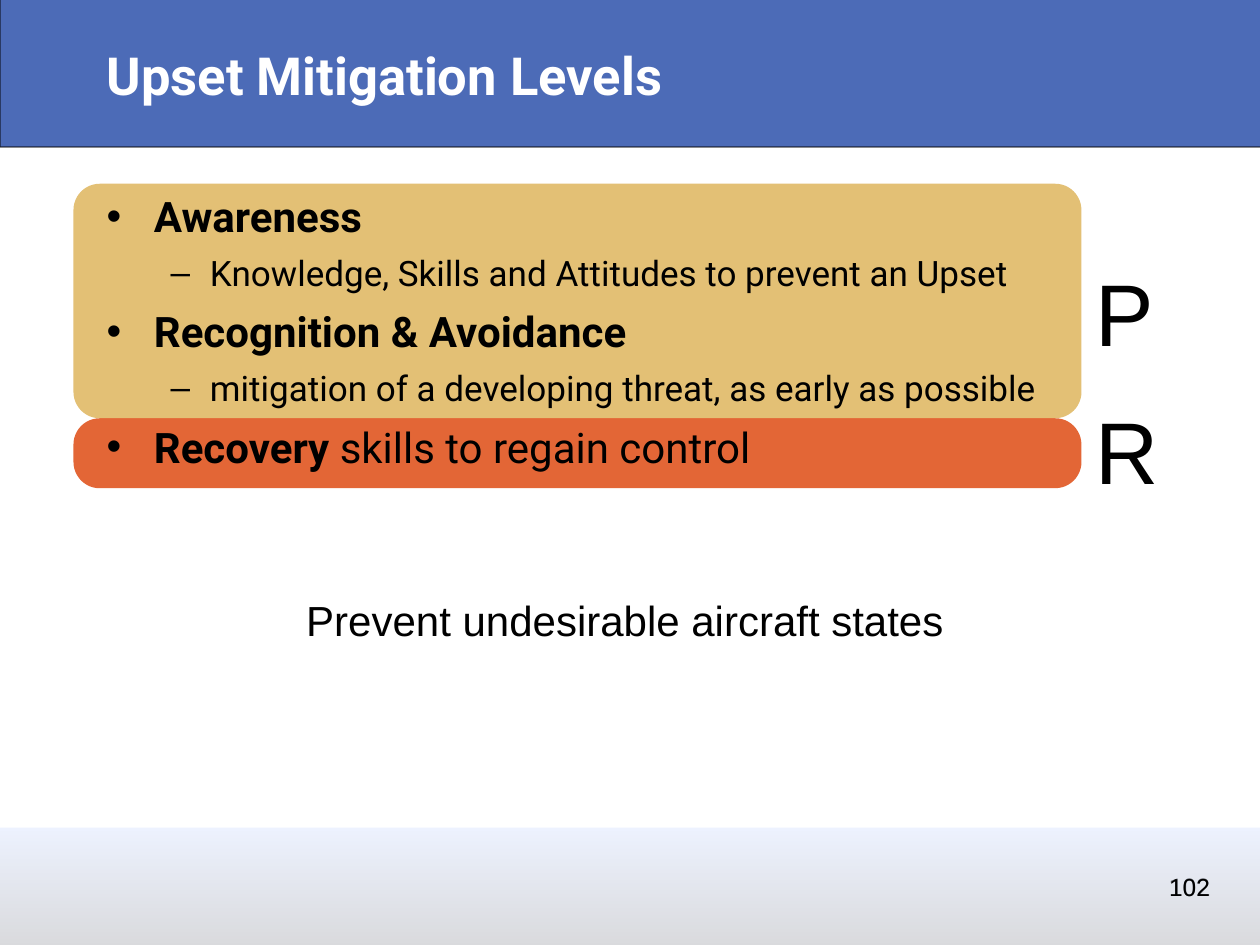
from dataclasses import dataclass

from lxml.etree import SubElement
from pptx import Presentation
from pptx.dml.color import RGBColor as Rgb
from pptx.enum.shapes import MSO_SHAPE as Kind
from pptx.enum.text import MSO_ANCHOR as Anchor, MSO_AUTO_SIZE as Fit, PP_ALIGN as Align
from pptx.oxml.ns import qn
from pptx.shapes.autoshape import Shape
from pptx.slide import Slide
from pptx.util import Pt


@dataclass(frozen=True)
class Theme:
    head: str = "Roboto"
    plain: str = "Arial"
    ink: Rgb = Rgb(0, 0, 0)
    white: Rgb = Rgb(255, 255, 255)
    band: Rgb = Rgb(0x00, 0x2D, 0x99)
    sand: Rgb = Rgb(0xE3, 0xC0, 0x75)
    rust: Rgb = Rgb(0xE3, 0x66, 0x36)
    sky: Rgb = Rgb(0xDC, 0xE6, 0xFF)
    grey: Rgb = Rgb(0xB4, 0xB5, 0xBA)
    title: int = 30
    topic: int = 24
    detail: int = 20
    letter: int = 50
    page: int = 14


@dataclass(frozen=True)
class Box:
    left: float
    top: float
    width: float
    height: float

    def lengths(self) -> tuple[Pt, ...]:
        return Pt(self.left), Pt(self.top), Pt(self.width), Pt(self.height)


@dataclass(frozen=True)
class Level:
    mark: str
    size: int
    margin: float
    hang: float
    before: float


@dataclass(frozen=True)
class Item:
    level: int
    bold: str = ""
    text: str = ""


@dataclass(frozen=True)
class Label:
    text: str
    box: Box
    size: int


THEME = Theme()
LEVELS = (Level("•", THEME.topic, 30, 27, 7), Level("–", THEME.detail, 62, 22.5, 6))
ITEMS = (
    Item(0, "Awareness"),
    Item(1, text="Knowledge, Skills and Attitudes to prevent an Upset"),
    Item(0, "Recognition & Avoidance"),
    Item(1, text="mitigation of a developing threat, as early as possible"),
    Item(0, "Recovery", " skills to regain control"),
)
LABELS = (
    Label("P", Box(623, 148, 45, 64), THEME.letter),
    Label("R", Box(623, 227, 48, 64), THEME.letter),
    Label("Prevent undesirable aircraft states", Box(172, 340, 377, 35), THEME.topic),
)
PAGE = Box(667.5, 495, 24.5, 24)
PANELS = ((Box(42, 239, 576, 40), THEME.rust), (Box(42, 105, 576, 134), THEME.sand))
RADIUS = 15


def set_font(para, face: str, size: int, color: Rgb = THEME.ink) -> None:
    font = para.font
    font.name, font.size, font.color.rgb = face, Pt(size), color


def indent(para, margin: float, hang: float = 0) -> None:
    props = para._p.get_or_add_pPr()
    props.set("marL", str(Pt(margin)))
    props.set("indent", str(-Pt(hang)))


def inset(frame, left: float, top: float, right: float, bottom: float) -> None:
    frame.margin_left, frame.margin_top = Pt(left), Pt(top)
    frame.margin_right, frame.margin_bottom = Pt(right), Pt(bottom)


def fade(shape: Shape, percent: int) -> None:
    """Make every colour of the shape partly opaque."""
    for color in list(shape.element.spPr.iter(qn("a:srgbClr"))):
        SubElement(color, qn("a:alpha")).set("val", str(percent * 1000))


def add_block(slide: Slide, kind: Kind, box: Box) -> Shape:
    shape = slide.shapes.add_shape(kind, *box.lengths())
    shape.shadow.inherit = False
    shape.line.fill.background()
    return shape


def add_panel(slide: Slide, box: Box, color: Rgb) -> None:
    panel = add_block(slide, Kind.ROUNDED_RECTANGLE, box)
    panel.adjustments[0] = RADIUS / box.height
    panel.fill.solid()
    panel.fill.fore_color.rgb = color


def add_footer(slide: Slide) -> None:
    foot = add_block(slide, Kind.RECTANGLE, Box(-7, 473, 731, 70))
    foot.fill.gradient()
    foot.fill.gradient_angle = 270
    for stop, color, place in zip(foot.fill.gradient_stops, (THEME.sky, THEME.grey), (0, 1)):
        stop.color.rgb, stop.position = color, place
    fade(foot, 50)


def add_header(slide: Slide) -> None:
    band = add_block(slide, Kind.RECTANGLE, Box(0, -3, 721, 87))
    band.fill.solid()
    band.fill.fore_color.rgb = THEME.band
    band.line.color.rgb = THEME.ink
    band.line.width = Pt(0.75)
    fade(band, 70)


def add_page(slide: Slide, face: str) -> None:
    frame = slide.shapes.add_textbox(*PAGE.lengths()).text_frame
    frame.word_wrap = False
    inset(frame, 0, 3.6, 0, 3.6)
    para = frame.paragraphs[0]
    para.text, para.alignment = "102", Align.CENTER
    set_font(para, face, THEME.page)


def add_label(slide: Slide, label: Label) -> None:
    frame = slide.shapes.add_textbox(*label.box.lengths()).text_frame
    frame.word_wrap, frame.auto_size = False, Fit.SHAPE_TO_FIT_TEXT
    inset(frame, 0, 0, 3, 0)
    para = frame.paragraphs[0]
    para.text = label.text
    indent(para, 3)
    set_font(para, THEME.plain, label.size)


def place(holder, box: Box, anchor: Anchor):
    """Move a placeholder, bring it to the front and return its text frame."""
    holder.left, holder.top, holder.width, holder.height = box.lengths()
    holder.element.getparent().append(holder.element)
    frame = holder.text_frame
    frame.word_wrap, frame.auto_size = True, Fit.NONE
    frame.vertical_anchor = anchor
    inset(frame, 4, 4, 10, 4)
    return frame


def fill_title(slide: Slide) -> None:
    frame = place(slide.shapes.title, Box(54, 12, 612, 61), Anchor.MIDDLE)
    para = frame.paragraphs[0]
    para.text, para.alignment = "Upset Mitigation Levels", Align.LEFT
    indent(para, 3)
    set_font(para, THEME.head, THEME.title, THEME.white)
    para.font.bold = True


def fill_body(slide: Slide) -> None:
    frame = place(slide.placeholders[1], Box(54, 105, 601, 216), Anchor.TOP)
    for row, item in enumerate(ITEMS):
        para = frame.add_paragraph() if row else frame.paragraphs[0]
        level = LEVELS[item.level]
        para.level = item.level
        indent(para, level.margin, level.hang)
        SubElement(para._p.get_or_add_pPr(), qn("a:buChar")).set("char", level.mark)
        para.space_before = Pt(level.before if row else 0)
        set_font(para, THEME.head, level.size)
        for text, bold in ((item.bold, True), (item.text, False)):
            if text:
                run = para.add_run()
                run.text, run.font.bold = text, bold


def main() -> None:
    deck = Presentation()
    deck.slide_width, deck.slide_height = Pt(720), Pt(540)
    slide = deck.slides.add_slide(deck.slide_layouts[1])
    add_page(slide, THEME.head)
    for box, color in PANELS:
        add_panel(slide, box, color)
    add_footer(slide)
    add_header(slide)
    fill_title(slide)
    fill_body(slide)
    add_page(slide, THEME.plain)
    for label in LABELS:
        add_label(slide, label)
    deck.save("out.pptx")


if __name__ == "__main__":
    main()
